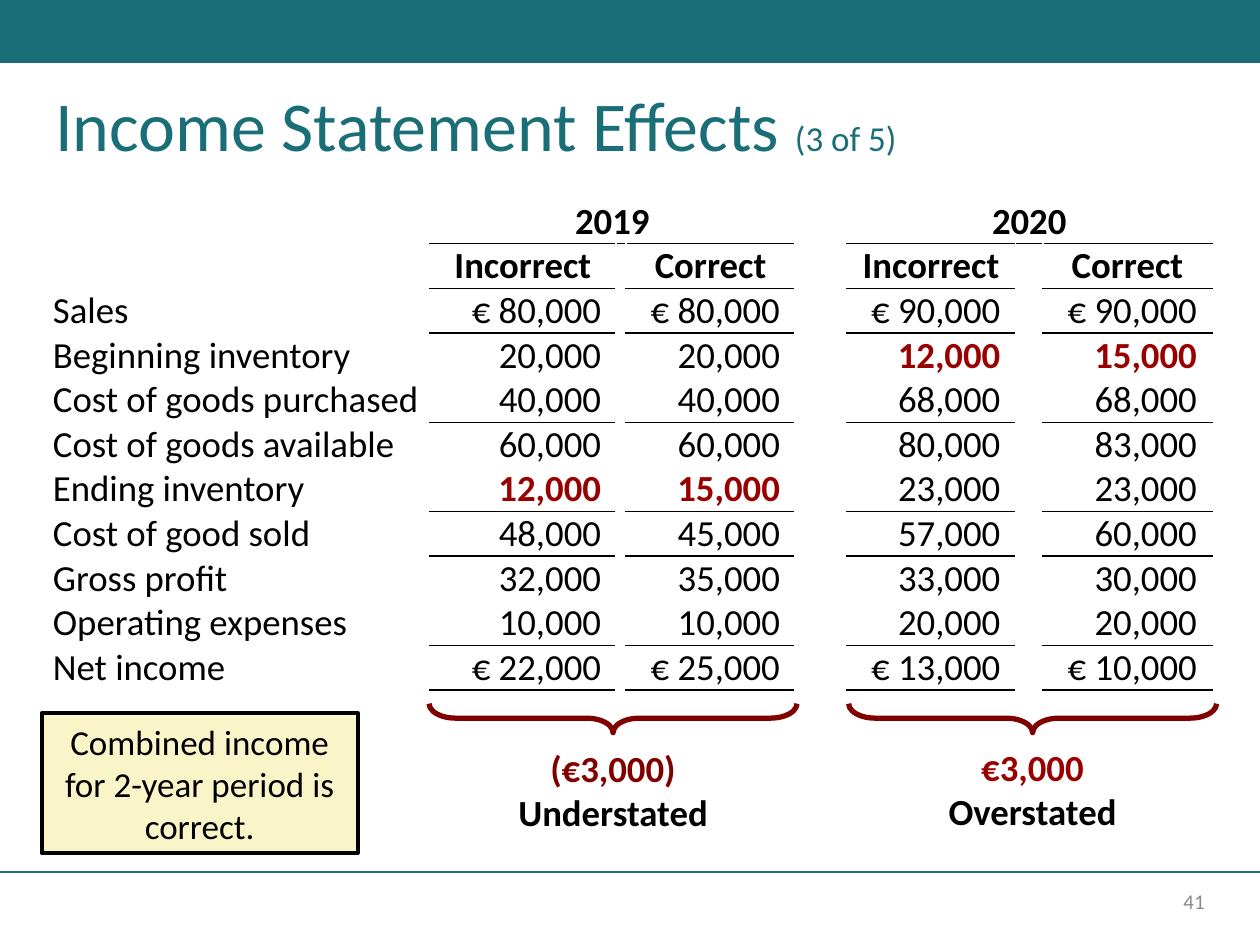
from lxml.etree import SubElement
from pptx import Presentation
from pptx.dml.color import RGBColor
from pptx.enum.shapes import MSO_CONNECTOR as Connector, MSO_SHAPE as Preset
from pptx.enum.text import MSO_ANCHOR as Anchor, PP_ALIGN as Align
from pptx.oxml import parse_xml
from pptx.oxml.ns import nsdecls, qn
from pptx.util import Emu, Inches, Pt

COLORS = {
    "teal": "196E78", "black": "000000", "white": "FFFFFF", "gray": "8C8C8C",
    "brace": "800000", "red": "990000", "cream": "FAF5C9",
}
GRID_COLUMNS, GRID_ROWS = 100, 75

YEARS = ["2019", "2020"]
HEADINGS = ["Incorrect", "Correct"] * 2
STATEMENT = [
    ("Sales", "€ 80,000", "€ 80,000", "€ 90,000", "€ 90,000"),
    ("Beginning inventory", "20,000", "20,000", "12,000", "15,000"),
    ("Cost of goods purchased", "40,000", "40,000", "68,000", "68,000"),
    ("Cost of goods available", "60,000", "60,000", "80,000", "83,000"),
    ("Ending inventory", "12,000", "15,000", "23,000", "23,000"),
    ("Cost of good sold", "48,000", "45,000", "57,000", "60,000"),
    ("Gross profit", "32,000", "35,000", "33,000", "30,000"),
    ("Operating expenses", "10,000", "10,000", "20,000", "20,000"),
    ("Net income", "€ 22,000", "€ 25,000", "€ 13,000", "€ 10,000"),
]
ERRORS = {"12,000", "15,000"}
TABLE_COLUMNS = [29.9, 14.8, 0.8, 13.4, 4.1, 13.4, 2.2, 13.4]
MONEY_COLUMNS = [1, 3, 5, 7]
YEAR_COLUMNS = [1, 5]
RULED_ROWS = {0, 1, 2, 4, 6, 7, 9, 10}
LAST_ROW = len(STATEMENT) + 1


def rgb(name):
    return RGBColor.from_string(COLORS[name])


class StatementSlide:
    font = "Calibri"
    body_size = 21

    def __init__(self, deck):
        self.column = deck.slide_width / GRID_COLUMNS
        self.row = deck.slide_height / GRID_ROWS
        self.slide = deck.slides.add_slide(deck.slide_layouts[6])

    def place(self, left, top, width, height):
        """Turn grid columns and rows into slide lengths."""
        return (Emu(round(left * self.column)), Emu(round(top * self.row)),
                Emu(round(width * self.column)), Emu(round(height * self.row)))

    def run(self, paragraph, text, size, color="black", bold=False):
        run = paragraph.add_run()
        run.text = text
        run.font.name = self.font
        run.font.size = Pt(size)
        run.font.bold = bold
        run.font.color.rgb = rgb(color)

    def fill_text(self, frame, lines, align):
        """Fill a frame; each line is a list of run arguments."""
        frame.word_wrap = True
        for index, runs in enumerate(lines):
            paragraph = frame.add_paragraph() if index else frame.paragraphs[0]
            paragraph.alignment = align
            for run in runs:
                self.run(paragraph, *run)

    def text(self, area, lines, align=Align.LEFT, anchor=Anchor.TOP):
        frame = self.slide.shapes.add_textbox(*self.place(*area)).text_frame
        frame.vertical_anchor = anchor
        self.fill_text(frame, lines, align)
        return frame

    def shape(self, preset, area, fill=None, line=None, weight=1):
        shape = self.slide.shapes.add_shape(preset, *self.place(*area))
        shape.shadow.inherit = False
        if fill:
            shape.fill.solid()
            shape.fill.fore_color.rgb = rgb(fill)
        else:
            shape.fill.background()
        if line:
            shape.line.color.rgb = rgb(line)
            shape.line.width = Pt(weight)
        else:
            shape.line.fill.background()
        return shape

    def rule(self, top, color):
        left, y, width, _ = self.place(0, top, GRID_COLUMNS, 0)
        rule = self.slide.shapes.add_connector(
            Connector.STRAIGHT, left, y, left + width, y)
        rule.line.color.rgb = rgb(color)
        rule.line.width = Pt(1)
        SubElement(rule._element.spPr, qn("a:effectLst"))

    def brace(self, center, middle, span, depth):
        """Draw a brace that opens upwards over the given span."""
        area = (center - depth / 2, middle - span / 2, depth, span)
        brace = self.shape(Preset.RIGHT_BRACE, area, line="brace", weight=3)
        brace.adjustments[0] = 0.92
        brace.rotation = 90

    def table(self, area, widths, row_count):
        table = self.slide.shapes.add_table(
            row_count, len(widths), *self.place(*area)).table
        table.first_row = table.horz_banding = False
        for column, width in zip(table.columns, widths):
            column.width = Emu(round(width * self.column))
        for row in table.rows:
            row.height = Emu(round(area[3] / row_count * self.row))
        for r in range(row_count):
            for c in range(len(widths)):
                cell = table.cell(r, c)
                cell.margin_left = cell.margin_right = 0
                cell.margin_top = cell.margin_bottom = 0
                cell.vertical_anchor = Anchor.BOTTOM
                cell.fill.background()
                self.borders(cell, edge(r - 1, c), edge(r, c))
        return table

    def borders(self, cell, top, bottom):
        side = ("white", 1)
        edges = {"lnL": side, "lnR": side, "lnT": top, "lnB": bottom}
        for index, (tag, (color, weight)) in enumerate(edges.items()):
            cell._tc.get_or_add_tcPr().insert(index, parse_xml(
                f'<a:{tag} {nsdecls("a")} w="{Pt(weight)}"><a:solidFill>'
                f'<a:srgbClr val="{COLORS[color]}"/></a:solidFill></a:{tag}>'))

    def cell(self, cell, text, align, color="black", bold=False):
        self.fill_text(cell.text_frame, [[(text, self.body_size, color, bold)]], align)


def edge(row, column):
    """Colour and weight of the border below a table cell."""
    under_year = row == 0 and any(c <= column < c + 3 for c in YEAR_COLUMNS)
    if under_year or (row in RULED_ROWS and column in MONEY_COLUMNS):
        return "black", 1.5 if row == LAST_ROW else 1
    return "white", 1


def add_statement(page):
    table = page.table((4.2, 15.8, 92.3, 39), TABLE_COLUMNS, LAST_ROW + 1)
    for column, year in zip(YEAR_COLUMNS, YEARS):
        table.cell(0, column).merge(table.cell(0, column + 2))
        page.cell(table.cell(0, column), year, Align.CENTER, bold=True)
    for column, heading in zip(MONEY_COLUMNS, HEADINGS):
        page.cell(table.cell(1, column), heading, Align.CENTER, bold=True)
    for row, (item, *amounts) in enumerate(STATEMENT, start=2):
        page.cell(table.cell(row, 0), item, Align.LEFT)
        for column, amount in zip(MONEY_COLUMNS, amounts):
            wrong = amount in ERRORS
            amount_cell = table.cell(row, column)
            amount_cell.margin_right = Inches(0.12)
            page.cell(amount_cell, amount, Align.RIGHT,
                      "red" if wrong else "black", wrong)


def main():
    deck = Presentation()
    deck.slide_width, deck.slide_height = Inches(10), Inches(7.5)
    page = StatementSlide(deck)

    page.shape(Preset.RECTANGLE, (0, 0, GRID_COLUMNS, 5), fill="teal")
    page.rule(69.2, "teal")
    page.text((70.6, 69.5, 26, 4), [[("41", 12, "gray")]],
              Align.RIGHT, Anchor.MIDDLE)
    title = page.text((3.4, 6.7, 93.3, 7.1), [[
        ("Income Statement Effects ", 40, "teal"), ("(3 of 5)", 20, "teal")]])
    title.paragraphs[0].line_spacing = 0.9

    add_statement(page)

    effects = [
        (48.65, (33.4, 58.7, 30.5, 8.1), "(€3,000)", "brace", "Understated"),
        (81.95, (68.1, 58.6, 27.7, 8.1), "€3,000", "red", "Overstated"),
    ]
    for center, area, amount, color, effect in effects:
        page.brace(center, 57, 29.2, 2.3)
        page.text(area, [[(amount, page.body_size, color, True)],
                         [(effect, page.body_size, "black", True)]], Align.CENTER)

    conclusion = page.shape(Preset.RECTANGLE, (3.3, 56.6, 25.1, 11.1),
                            "cream", "black", 2.25)
    page.fill_text(conclusion.text_frame,
                   [[("Combined income for 2-year period is correct.", 20)]],
                   Align.CENTER)

    deck.save("out.pptx")


if __name__ == "__main__":
    main()
